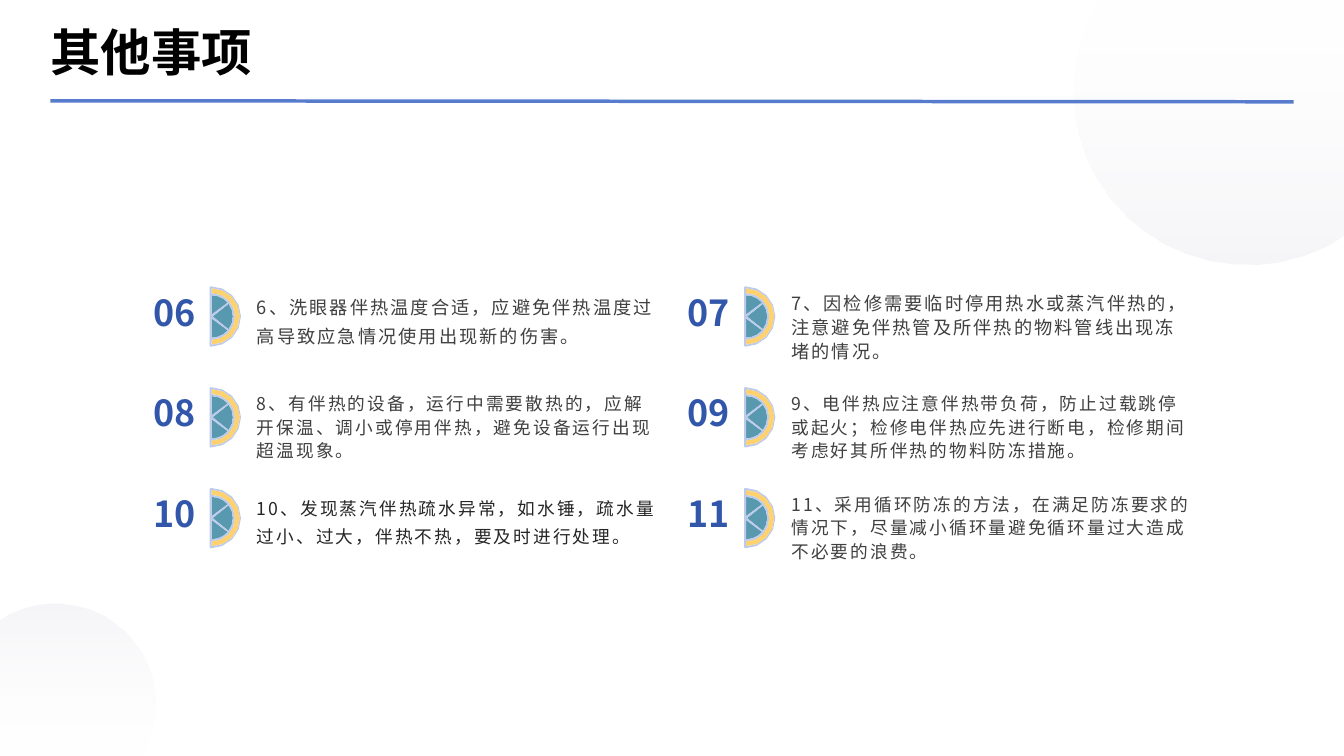
from dataclasses import dataclass
from math import ceil, cos, radians, sin

from lxml import etree
from pptx import Presentation
from pptx.dml.color import RGBColor
from pptx.enum.shapes import MSO_CONNECTOR
from pptx.enum.text import MSO_ANCHOR, PP_ALIGN
from pptx.oxml.ns import qn
from pptx.util import Inches, Pt

STRAIGHT = MSO_CONNECTOR.STRAIGHT
TOP, MIDDLE = MSO_ANCHOR.TOP, MSO_ANCHOR.MIDDLE
LEFT = PP_ALIGN.LEFT


@dataclass(frozen=True)
class Theme:
    font: str = "Noto Sans CJK SC"
    title: str = "000000"
    number: str = "3257AA"
    body: str = "404040"
    body_dark: str = "262626"
    rule: str = "577CCE"
    wedge: str = "5999AF"
    band: str = "FFC033"
    frame: str = "BCCBEB"
    fade: tuple = (("FFFFFF", 10), ("D8D8E4", 24))
    title_size: float = 36
    number_size: float = 25.6
    body_size: float = 12.6
    body_size_large: float = 13
    body_tracking: int = 150


THEME = Theme()
WIDTH, HEIGHT = 13.33, 7.5

COLUMN_LEFT, COLUMN_STEP = 1.42, 5.3
ROW_TOP, ROW_STEP = 2.83, 1.0
ICON_X, ICON_Y = 0.68, 0.31
BODY_X = 1.03

# number, text, size, line spacing, colour; read row by row
ITEMS = [
    ("06", "6、洗眼器伴热温度合适，应避免伴热温度过高导致应急情况使用出现新的伤害。",
     THEME.body_size_large, 1.3, THEME.body),
    ("07", "7、因检修需要临时停用热水或蒸汽伴热的，注意避免伴热管及所伴热的物料管线出现冻堵的情况。",
     THEME.body_size_large, 1.1, THEME.body),
    ("08", "8、有伴热的设备，运行中需要散热的，应解开保温、调小或停用伴热，避免设备运行出现超温现象。",
     THEME.body_size, 1.1, THEME.body),
    ("09", "9、电伴热应注意伴热带负荷，防止过载跳停或起火；检修电伴热应先进行断电，检修期间考虑好其所伴热的物料防冻措施。",
     THEME.body_size, 1.1, THEME.body),
    ("10", "10、发现蒸汽伴热疏水异常，如水锤，疏水量过小、过大，伴热不热，要及时进行处理。",
     THEME.body_size, 1.3, THEME.body_dark),
    ("11", "11、采用循环防冻的方法，在满足防冻要求的情况下，尽量减小循环量避免循环量过大造成不必要的浪费。",
     THEME.body_size, 1.1, THEME.body),
]


def arc(center_x, center_y, radius, start, end, step=22.5):
    """Points along a circle; degrees run clockwise from the right."""
    count = ceil(abs(end - start) / step)
    angles = [radians(start + (end - start) * i / count) for i in range(count + 1)]
    return [(center_x + radius * cos(a), center_y + radius * sin(a)) for a in angles]


class SlideBuilder:
    def __init__(self, presentation, theme):
        self.theme = theme
        self.slide = presentation.slides.add_slide(presentation.slide_layouts[5])

    def format_text(self, shape, text, size, color, bold=False, spacing=1.0,
                    tracking=0, anchor=TOP):
        frame = shape.text_frame
        frame.word_wrap = True
        frame.vertical_anchor = anchor
        frame.text = text
        paragraph = frame.paragraphs[0]
        paragraph.alignment = LEFT
        paragraph.line_spacing = spacing
        font = paragraph.runs[0].font
        font.name, font.size, font.bold = self.theme.font, Pt(size), bold
        font.color.rgb = RGBColor.from_string(color)
        properties = paragraph.runs[0]._r.get_or_add_rPr()
        etree.SubElement(properties, qn("a:ea")).set("typeface", self.theme.font)
        if tracking:
            properties.set("spc", str(tracking))

    def title(self, text, left, top, width, height):
        shape = self.slide.shapes.title
        shape.left, shape.top = Inches(left), Inches(top)
        shape.width, shape.height = Inches(width), Inches(height)
        frame = shape.text_frame
        frame.margin_left = frame.margin_right = 0
        frame.margin_top = frame.margin_bottom = 0
        self.format_text(shape, text, self.theme.title_size, self.theme.title,
                         bold=True, anchor=MIDDLE)

    def text(self, text, left, top, width, height, size, color, **style):
        shape = self.slide.shapes.add_textbox(
            Inches(left), Inches(top), Inches(width), Inches(height))
        self.format_text(shape, text, size, color, **style)

    def rule(self, start_x, start_y, end_x, end_y):
        line = self.slide.shapes.add_connector(
            STRAIGHT, Inches(start_x), Inches(start_y), Inches(end_x), Inches(end_y))
        line.line.color.rgb = RGBColor.from_string(self.theme.rule)
        line.line.width = Pt(2.5)
        etree.SubElement(line._element.spPr, qn("a:effectLst"))

    def outline(self, contours):
        """Unfilled freeform; later contours cut holes in the first."""
        builder = None
        for contour in contours:
            points = [(Inches(x), Inches(y)) for x, y in contour]
            if builder is None:
                builder = self.slide.shapes.build_freeform(*points[0])
            else:
                builder.move_to(*points[0])
            builder.add_line_segments(points[1:], close=True)
        shape = builder.convert_to_shape()
        shape.line.fill.background()
        shape.shadow.inherit = False
        return shape

    def set_opacity(self, shape, percentages):
        colors = shape._element.spPr.iter(qn("a:srgbClr"))
        for color, percentage in zip(list(colors), percentages):
            etree.SubElement(color, qn("a:alpha")).set("val", str(percentage * 1000))

    def solid(self, contours, color, opacity=100):
        shape = self.outline(contours)
        shape.fill.solid()
        shape.fill.fore_color.rgb = RGBColor.from_string(color)
        if opacity < 100:
            self.set_opacity(shape, [opacity])

    def faded_disc(self, points, angle):
        shape = self.outline([points])
        shape.fill.gradient()
        shape.fill.gradient_angle = angle
        for stop, (color, _) in zip(shape.fill.gradient_stops, self.theme.fade):
            stop.color.rgb = RGBColor.from_string(color)
        self.set_opacity(shape, [opacity for _, opacity in self.theme.fade])

    def half_wheel(self, x, y):
        """Three wedges and a band, set in a pale frame."""
        wedges = [
            [(x + 0.01, y)] + arc(x, y, 0.21, -37, 37),
            [(x, y + 0.02)] + arc(x, y, 0.21, 41, 90),
            [(x, y - 0.02)] + arc(x, y, 0.21, -90, -41),
        ]
        band = arc(x, y, 0.28, -90, 90) + arc(x, y, 0.23, 90, -90)
        for wedge in wedges:
            self.solid([wedge], self.theme.wedge)
        self.solid([band], self.theme.band, opacity=70)
        rim = [(x - 0.02, y - 0.29)] + arc(x - 0.01, y, 0.3, -90, 90) + [(x - 0.02, y + 0.29)]
        self.solid([rim, *wedges, band], self.theme.frame)

    def item(self, left, top, number, text, size, spacing, color):
        self.text(text, left + BODY_X, top, 4.16, 0.84, size, color,
                  spacing=spacing, tracking=self.theme.body_tracking)
        self.half_wheel(left + ICON_X, top + ICON_Y)
        self.text(number, left, top, 0.67, 0.61, self.theme.number_size,
                  self.theme.number, bold=True)


def main():
    presentation = Presentation()
    presentation.slide_width, presentation.slide_height = Inches(WIDTH), Inches(HEIGHT)
    builder = SlideBuilder(presentation, THEME)
    builder.faded_disc([(WIDTH, 0)] + arc(12.37, 0.91, 1.72, 56, 212, step=8), angle=270)
    builder.faded_disc([(0, HEIGHT)] + arc(0.55, 6.98, 0.99, 236, 392, step=8), angle=90)
    builder.rule(0.5, 1, 12.83, 1.01)
    builder.title("其他事项", 0.5, 0.17, 12.33, 0.67)
    for index, item in enumerate(ITEMS):
        row, column = divmod(index, 2)
        builder.item(COLUMN_LEFT + column * COLUMN_STEP, ROW_TOP + row * ROW_STEP, *item)
    presentation.save("out.pptx")


if __name__ == "__main__":
    main()
